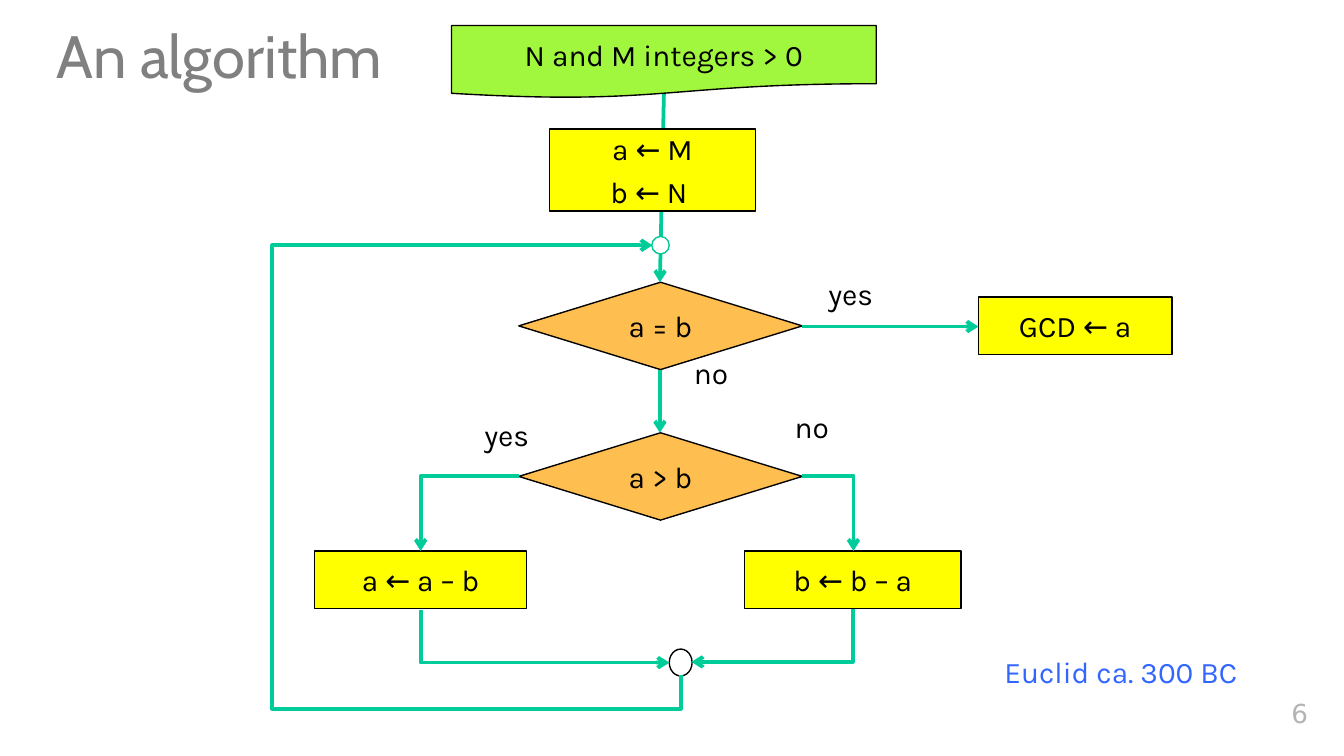
import pptx
import pptx.util
import pptx.dml.color
import pptx.enum.shapes
import pptx.enum.text
import pptx.oxml
import pptx.oxml.ns
from dataclasses import dataclass

Inches = pptx.util.Inches
Pt = pptx.util.Pt
RGBColor = pptx.dml.color.RGBColor
Kind = pptx.enum.shapes.MSO_SHAPE
Wire = pptx.enum.shapes.MSO_CONNECTOR
Align = pptx.enum.text.PP_ALIGN
Anchor = pptx.enum.text.MSO_ANCHOR

BLACK = RGBColor(0x00, 0x00, 0x00)
WHITE = RGBColor(0xFF, 0xFF, 0xFF)
YELLOW = RGBColor(0xFF, 0xFF, 0x00)
ORANGE = RGBColor(0xFF, 0xBE, 0x50)
LIME = RGBColor(0xA1, 0xF7, 0x3D)
GREEN = RGBColor(0x00, 0xCC, 0x99)
TEAL = RGBColor(0x00, 0xC8, 0x96)
BLUE = RGBColor(0x33, 0x66, 0xFF)
GREY = RGBColor(0x80, 0x80, 0x80)
PALE = RGBColor(0xB3, 0xB3, 0xB3)


@dataclass
class Node:
    kind: Kind
    left: float
    top: float
    width: float
    height: float
    fill: RGBColor
    text: str = ""
    line: RGBColor = BLACK


@dataclass
class Label:
    text: str
    left: float
    top: float
    width: float
    height: float = 0.43
    color: RGBColor = BLACK
    wrap: bool = False


@dataclass
class Bend:
    """Elbow given by its frame before it is turned and flipped."""
    left: float
    top: float
    width: float
    height: float
    turn: int = 0
    flip: str = ""
    shape: str = "bentConnector2"
    adjust: tuple = ()


def style(frame, size: float, font: str, color: RGBColor, align: Align) -> None:
    for para in frame.paragraphs:
        para.alignment = align
        for run in para.runs:
            run.font.size = Pt(size)
            run.font.name = font
            run.font.color.rgb = color


def write(shape, text: str, color: RGBColor, wrap: bool) -> None:
    frame = shape.text_frame
    frame.text = text
    frame.word_wrap = wrap
    frame.vertical_anchor = Anchor.MIDDLE
    style(frame, 16, "Karla", color, Align.CENTER)
    for para in frame.paragraphs:
        para.space_before = Pt(4)


def draw_node(slide, node: Node) -> None:
    shape = slide.shapes.add_shape(
        node.kind, Inches(node.left), Inches(node.top),
        Inches(node.width), Inches(node.height))
    shape.shadow.inherit = False
    shape.fill.solid()
    shape.fill.fore_color.rgb = node.fill
    shape.line.color.rgb = node.line
    shape.line.width = Pt(0.75)
    if node.text:
        write(shape, node.text, BLACK, False)


def draw_label(slide, label: Label) -> None:
    box = slide.shapes.add_textbox(
        Inches(label.left), Inches(label.top),
        Inches(label.width), Inches(label.height))
    write(box, label.text, label.color, label.wrap)


def draw_link(slide, kind: Wire, x1: float, y1: float, x2: float, y2: float):
    link = slide.shapes.add_connector(
        kind, Inches(x1), Inches(y1), Inches(x2), Inches(y2))
    link.line.color.rgb = GREEN
    link.line.width = Pt(2)
    tail = pptx.oxml.parse_xml(
        f'<a:tailEnd {pptx.oxml.ns.nsdecls("a")} type="arrow"/>')
    link.line._get_or_add_ln().append(tail)
    link._element.spPr.append(pptx.oxml.parse_xml(
        f'<a:effectLst {pptx.oxml.ns.nsdecls("a")}/>'))
    return link


def draw_bend(slide, bend: Bend) -> None:
    link = draw_link(slide, Wire.ELBOW, bend.left, bend.top,
                     bend.left + bend.width, bend.top + bend.height)
    props = link._element.spPr
    frame = props.find(pptx.oxml.ns.qn("a:xfrm"))
    if bend.turn:
        frame.set("rot", str(bend.turn * 60000))
    if bend.flip:
        frame.set(bend.flip, "1")
    geom = props.find(pptx.oxml.ns.qn("a:prstGeom"))
    geom.set("prst", bend.shape)
    guides = "".join(f'<a:gd name="adj{i}" fmla="val {value}"/>'
                     for i, value in enumerate(bend.adjust, 1))
    for child in list(geom):
        geom.remove(child)
    geom.append(pptx.oxml.parse_xml(
        f'<a:avLst {pptx.oxml.ns.nsdecls("a")}>{guides}</a:avLst>'))


NODES = [
    Node(Kind.FLOWCHART_DECISION, 3.86, 2.1, 2.11, 0.65, ORANGE, "a = b"),
    Node(Kind.FLOWCHART_DECISION, 3.86, 3.22, 2.11, 0.65, ORANGE, "a > b"),
    Node(Kind.RECTANGLE, 2.34, 4.1, 1.58, 0.43, YELLOW, "a ← a – b"),
    Node(Kind.RECTANGLE, 5.54, 4.1, 1.61, 0.43, YELLOW, "b ← b – a"),
    Node(Kind.FLOWCHART_CONNECTOR, 4.98, 4.83, 0.17, 0.2, WHITE),
    Node(Kind.RECTANGLE, 7.28, 2.21, 1.44, 0.43, YELLOW, "GCD ← a"),
    Node(Kind.FLOWCHART_DOCUMENT, 3.36, 0.19, 3.16, 0.54, LIME,
         "N and M integers > 0"),
]
# These lie over the lines
FRONT = [
    Node(Kind.OVAL, 4.85, 1.76, 0.13, 0.13, WHITE, line=TEAL),
    Node(Kind.RECTANGLE, 4.09, 0.96, 1.53, 0.61, YELLOW, "a ← M\nb ← N "),
]
LABELS = [
    Label("yes", 5.99, 1.97, 0.68),
    Label("no", 5.02, 2.56, 0.54),
    Label("yes", 3.43, 3.02, 0.68),
    Label("no", 5.77, 2.96, 0.54),
    Label("Euclid ca. 300 BC", 6.65, 4.78, 3.38, color=BLUE, wrap=True),
]
LINES = [
    (4.94, 0.7, 4.91, 2.1),
    (4.91, 2.75, 4.91, 3.22),
    (5.97, 2.43, 7.28, 2.43),
]
BENDS = [
    Bend(3.13, 3.54, 0.73, 0.56, 180, "flipV"),
    Bend(5.97, 3.54, 0.38, 0.56),
    Bend(5.55, 4.13, 0.39, 1.2, 90),
    Bend(3.86, 3.81, 0.39, 1.85, 270, "flipH"),
    Bend(3.36, 3.32, 3.2, 0.21, 90, "flipH", "bentConnector4",
         (-7800, 1448000)),
]


def main() -> None:
    deck = pptx.Presentation()
    deck.slide_width = Inches(10)
    deck.slide_height = Inches(10) * 9 // 16
    slide = deck.slides.add_slide(deck.slide_layouts[5])

    # Title
    title = slide.shapes.title
    title.left, title.top = Inches(0.32), Inches(0.11)
    title.width, title.height = Inches(9.24), Inches(0.59)
    title.text_frame.text = "An algorithm"
    title.text_frame.vertical_anchor = Anchor.MIDDLE
    title.text_frame.auto_size = pptx.enum.text.MSO_AUTO_SIZE.NONE
    style(title.text_frame, 32, "Cabin", GREY, Align.LEFT)

    # Flow chart
    for node in NODES:
        draw_node(slide, node)
    for label in LABELS:
        draw_label(slide, label)
    for ends in LINES:
        draw_link(slide, Wire.STRAIGHT, *ends)
    for bend in BENDS:
        draw_bend(slide, bend)
    for node in FRONT:
        draw_node(slide, node)

    # Page number
    page = slide.shapes.add_textbox(
        Inches(7.75), Inches(5.14), Inches(2.08), Inches(0.37))
    page.text_frame.text = "6"
    page.text_frame.word_wrap = True
    style(page.text_frame, 14, "DejaVu Sans", PALE, Align.RIGHT)

    deck.save("out.pptx")


if __name__ == "__main__":
    main()
